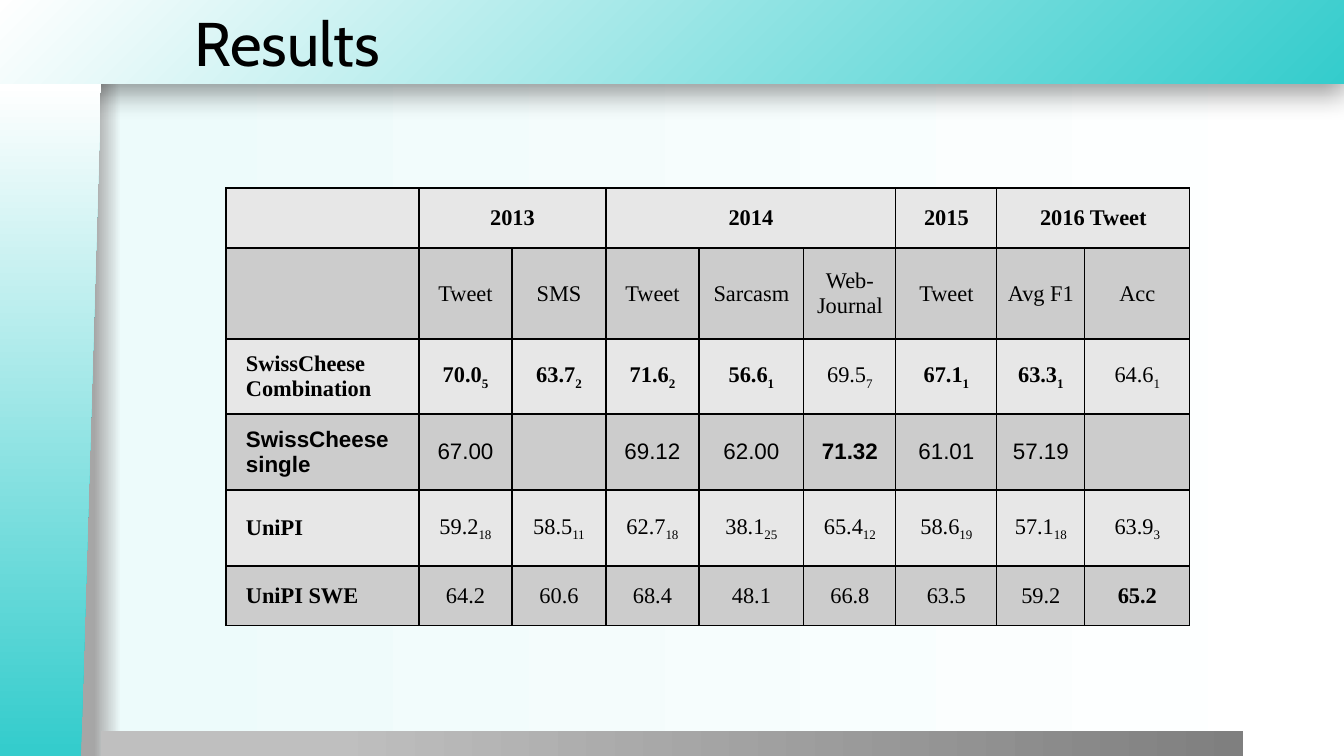
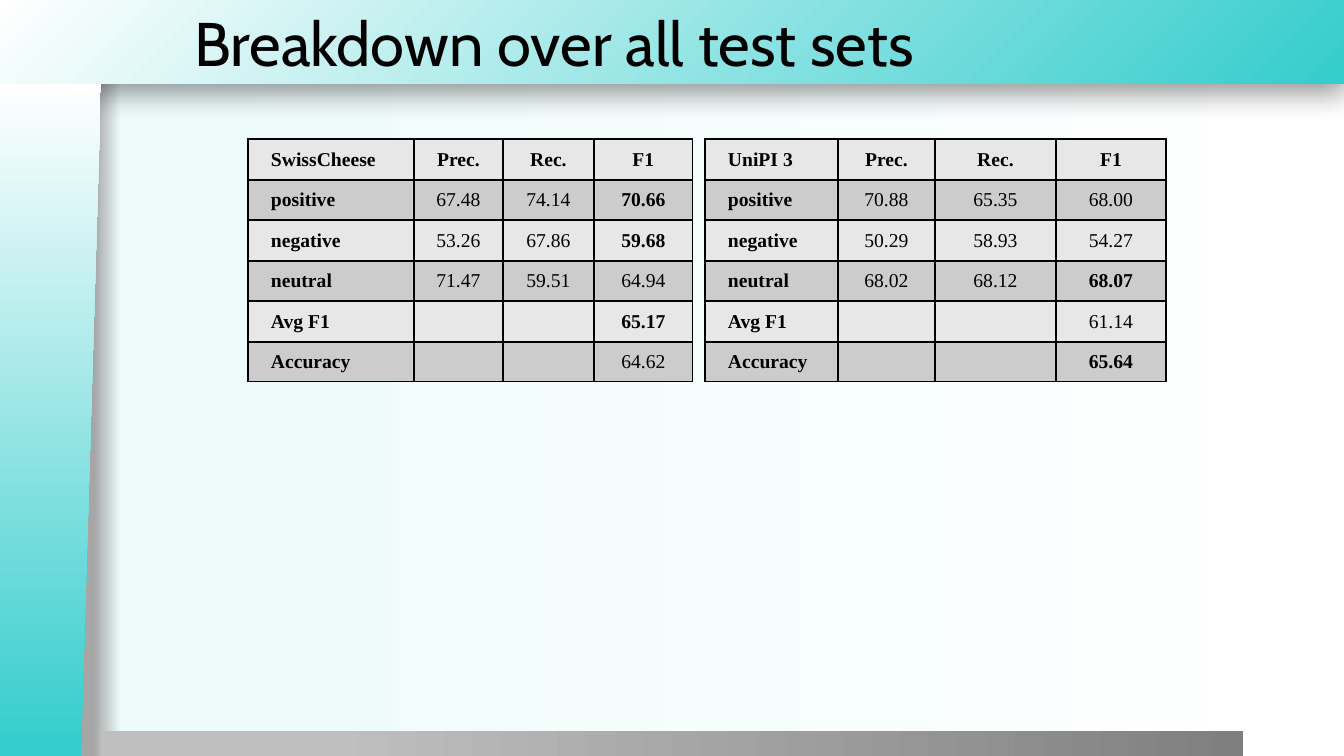
from lxml.etree import SubElement
from pptx import Presentation
from pptx.dml.color import RGBColor
from pptx.enum.shapes import MSO_SHAPE as Preset
from pptx.enum.text import MSO_ANCHOR as Anchor, PP_ALIGN as Align
from pptx.oxml import parse_xml
from pptx.oxml.ns import nsdecls, qn
from pptx.util import Pt

# Scale and palette
SLIDE_W, SLIDE_H = 1344, 756
EMU_PER_PX = 914400 / 100.8
BLACK, WHITE, TEAL = "000000", "FFFFFF", "34CCCC"
ROW_FILLS = "E7E7E7", "CCCCCC"
TITLE_FONT, TABLE_FONT, ALT_FONT = "Cabin", "Times New Roman", "Arial"
LABEL_INDENT = 16

# Cell notation: a leading * is bold, text after _ is a subscript
RESULTS = [
    ["", "*2013", "", "*2014", "", "", "*2015", "*2016 Tweet", ""],
    ["", "Tweet", "SMS", "Tweet", "Sarcasm", "Web-Journal", "Tweet",
     "Avg F1", "Acc"],
    ["*SwissCheese\n*Combination", "*70.0_5", "*63.7_2", "*71.6_2", "*56.6_1",
     "69.5_7", "*67.1_1", "*63.3_1", "64.6_1"],
    ["*SwissCheese\n*single", "67.00", "", "69.12", "62.00", "*71.32",
     "61.01", "57.19", ""],
    ["*UniPI", "59.2_18", "58.5_11", "62.7_18", "38.1_25", "65.4_12",
     "58.6_19", "57.1_18", "63.9_3"],
    ["*UniPI SWE", "64.2", "60.6", "68.4", "48.1", "66.8", "63.5", "59.2",
     "*65.2"],
]
YEAR_SPANS = [(1, 2), (3, 5), (7, 8)]

MEASURES = ["*Prec.", "*Rec.", "*F1"]
SWISSCHEESE = [
    ["*SwissCheese", *MEASURES],
    ["*positive", "67.48", "74.14", "*70.66"],
    ["*negative", "53.26", "67.86", "*59.68"],
    ["*neutral", "71.47", "59.51", "64.94"],
    ["*Avg F1", "", "", "*65.17"],
    ["*Accuracy", "", "", "64.62"],
]
UNIPI = [
    ["*UniPI 3", *MEASURES],
    ["*positive", "70.88", "65.35", "68.00"],
    ["*negative", "50.29", "58.93", "54.27"],
    ["*neutral", "68.02", "68.12", "*68.07"],
    ["*Avg F1", "", "", "61.14"],
    ["*Accuracy", "", "", "*65.64"],
]


def px(length):
    return round(length * EMU_PER_PX)


def rgb(color):
    return RGBColor.from_string(color)


def apply(target, values):
    for name, value in values.items():
        setattr(target, name, value)


def set_gradient(fill, owner, stops, corner=False):
    """Fill left to right, or outwards from the bottom right corner."""
    fill.gradient()
    gradient = owner.find(".//" + qn("a:gradFill"))
    for part in list(gradient):
        gradient.remove(part)
    gradient.set("rotWithShape", "1")
    stop_list = SubElement(gradient, qn("a:gsLst"))
    for percent, color in stops:
        stop = SubElement(stop_list, qn("a:gs"), pos=str(percent * 1000))
        SubElement(stop, qn("a:srgbClr"), val=color)
    if corner:
        spread = SubElement(gradient, qn("a:path"))
        spread.set("path", "circle")
        SubElement(spread, qn("a:fillToRect"), l="100000", t="100000")
    else:
        SubElement(gradient, qn("a:lin"), ang="0", scaled="0")


def add_band(slide, preset, box, stops, corner=False):
    band = slide.shapes.add_shape(preset, *map(px, box))
    band.shadow.inherit = False
    band.line.fill.background()
    set_gradient(band.fill, band.element, stops, corner)
    return band


def add_drop_shadow(band):
    effects = band.element.spPr.find(qn("a:effectLst"))
    shadow = SubElement(effects, qn("a:outerShdw"), blurRad=str(Pt(20)),
                        dist=str(Pt(6)), dir="5400000", algn="t",
                        rotWithShape="0")
    color = SubElement(shadow, qn("a:srgbClr"), val=BLACK)
    SubElement(color, qn("a:alpha"), val="40000")


def style_layout(layout, slide):
    """Give the layout its background, bands and title place."""
    set_gradient(layout.background.fill, layout.element,
                 [(7, "A6A6A6"), (9, "EDFBFB"), (100, WHITE)])
    for holder in list(layout.placeholders):
        if holder.placeholder_format.idx:
            holder.element.getparent().remove(holder.element)
    apply(layout.placeholders[0], {"left": px(184), "top": 0,
                                   "width": px(1160), "height": px(84)})

    top_band = add_band(slide, Preset.RECTANGLE, (-1, 0, SLIDE_W + 1, 84),
                        [(0, TEAL), (100, WHITE)], corner=True)
    add_drop_shadow(top_band)
    bottom_band = add_band(slide, Preset.RECTANGLE, (101, 731, 1142, 26),
                           [(20, "BFBFBF"), (100, "7F7F7F")])
    side_band = add_band(slide, Preset.FLOWCHART_MANUAL_INPUT,
                         (-286, 370, 673, 101), [(1, TEAL), (100, WHITE)])
    side_band.rotation = 270
    side_band.element.spPr.find(qn("a:xfrm")).set("flipV", "1")

    # Bands are moved behind the layout's title
    for position, band in enumerate((top_band, bottom_band, side_band), 2):
        layout.shapes.element.insert(position, band.element)


def set_title(slide, text):
    title = slide.shapes.title
    title.text = text
    title.text_frame.vertical_anchor = Anchor.MIDDLE
    paragraph = title.text_frame.paragraphs[0]
    paragraph.alignment = Align.LEFT
    apply(paragraph.font, {"name": TITLE_FONT, "size": Pt(44)})
    paragraph.font.color.rgb = rgb(BLACK)


def add_run(paragraph, text, font_values, subscript=False):
    run = paragraph.add_run()
    run.text = text
    apply(run.font, font_values)
    run.font.color.rgb = rgb(BLACK)
    if subscript:
        run.font._element.set("baseline", "-25000")


def write_cell(cell, content, font_values, alignment, indent):
    frame = cell.text_frame
    for number, line in enumerate(content.split("\n")):
        paragraph = frame.add_paragraph() if number else frame.paragraphs[0]
        apply(paragraph, {"alignment": alignment, "line_spacing": 1.02})
        if indent:
            paragraph._p.get_or_add_pPr().set("indent", str(px(indent)))
        if not line:
            continue
        values = {**font_values, "bold": line.startswith("*")}
        main, _, rank = line.removeprefix("*").partition("_")
        add_run(paragraph, main, values)
        if rank:
            add_run(paragraph, rank, values, subscript=True)


def add_borders(cell):
    properties = cell._tc.get_or_add_tcPr()
    for position, side in enumerate("LRTB"):
        properties.insert(position, parse_xml(
            f'<a:ln{side} {nsdecls("a")} w="{Pt(1)}"><a:solidFill>'
            f'<a:srgbClr val="{BLACK}"/></a:solidFill></a:ln{side}>'))


def add_score_table(slide, corner, widths, heights, rows, size, margin,
                    label_align, spans=(), row_fonts=None):
    frame = slide.shapes.add_table(
        len(rows), len(widths), *map(px, (*corner, sum(widths), sum(heights))))
    table = frame.table
    apply(table, {"first_row": False, "horz_banding": False})
    for column, width in zip(table.columns, widths):
        column.width = px(width)
    for row, height in zip(table.rows, heights):
        row.height = px(height)

    cell_values = {"margin_left": px(margin), "margin_right": px(margin),
                   "margin_top": 0, "margin_bottom": 0,
                   "vertical_anchor": Anchor.MIDDLE}
    for r, contents in enumerate(rows):
        font_values = {"name": (row_fonts or {}).get(r, TABLE_FONT),
                       "size": Pt(size)}
        for c, content in enumerate(contents):
            cell = table.cell(r, c)
            apply(cell, cell_values)
            cell.fill.solid()
            cell.fill.fore_color.rgb = rgb(ROW_FILLS[r % 2])
            add_borders(cell)
            write_cell(cell, content, font_values,
                       Align.CENTER if c else label_align,
                       0 if c else LABEL_INDENT)
    for first, last in spans:
        table.cell(0, first).merge(table.cell(0, last))


def main():
    prs = Presentation()
    apply(prs, {"slide_width": px(SLIDE_W), "slide_height": px(SLIDE_H)})
    layout = prs.slide_layouts.get_by_name("Title Only")

    # Results per year
    results = prs.slides.add_slide(layout)
    style_layout(layout, results)
    set_title(results, "Results")
    add_score_table(results, (226, 188),
                    [193, 93, 94, 93, 105, 92, 101, 88, 105],
                    [60, 91, 75, 76, 76, 60], RESULTS, size=16, margin=4,
                    label_align=Align.LEFT, spans=YEAR_SPANS,
                    row_fonts={3: ALT_FONT})

    # Breakdown of both systems
    breakdown = prs.slides.add_slide(layout)
    set_title(breakdown, "Breakdown over all test sets")
    for left, widths, scores in (
            (248, [166, 89, 91, 99], SWISSCHEESE),
            (705, [133, 97, 121, 110], UNIPI)):
        add_score_table(breakdown, (left, 139), widths, [41, 40] * 3, scores,
                        size=14, margin=7, label_align=Align.JUSTIFY)

    prs.save("out.pptx")


if __name__ == "__main__":
    main()
